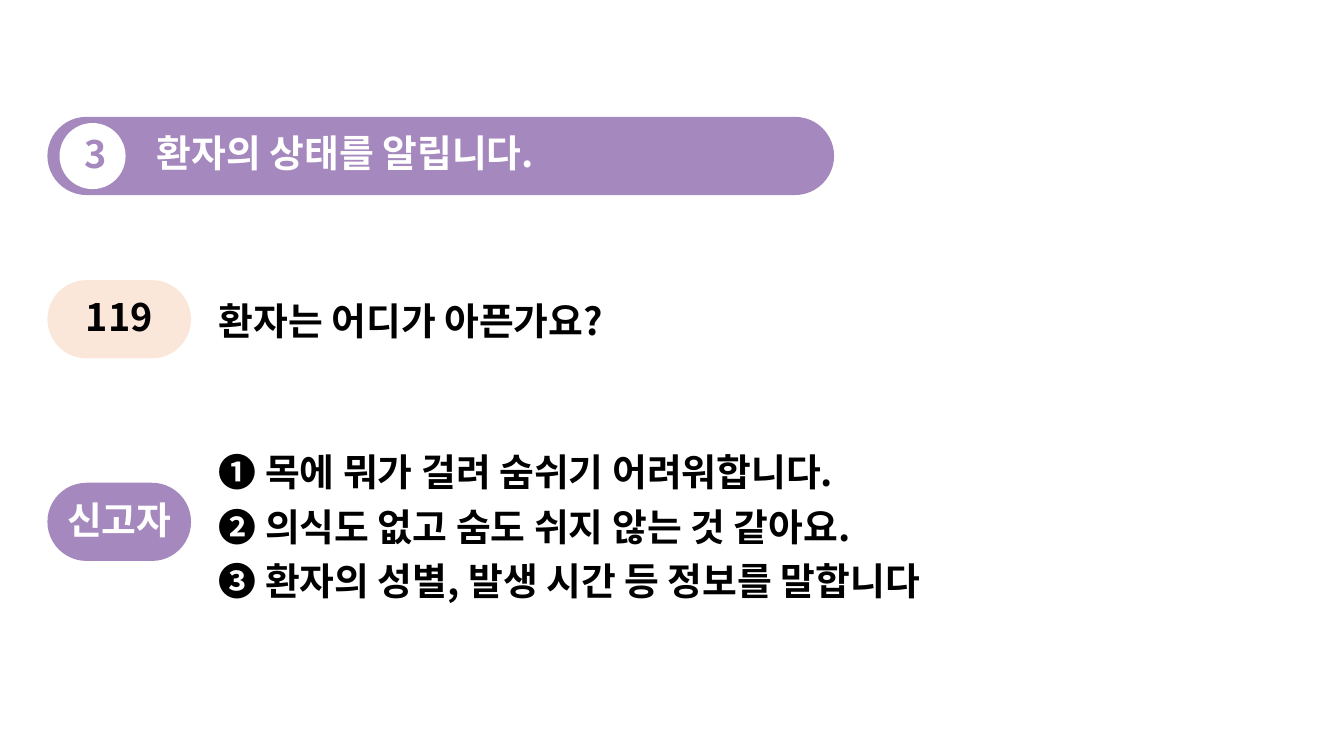
from lxml.etree import SubElement
from pptx import Presentation
from pptx.dml.color import RGBColor
from pptx.enum.shapes import MSO_SHAPE
from pptx.enum.text import MSO_ANCHOR, MSO_AUTO_SIZE, PP_ALIGN
from pptx.oxml.ns import qn
from pptx.util import Cm, Pt

FONT = "Noto Sans CJK KR"
PURPLE, PEACH, WHITE, BLACK = "A588BD", "FAE7DA", "FFFFFF", "000000"
LEFT, PILL_H, LABEL_H = 2.39, 3.94, 2.36
PILL_W, ANSWER_X = 7.24, 10.87


def rgb(value):
    return RGBColor.from_string(value)


def add_filled(s, kind, x, y, w, h, color):
    sp = s.shapes.add_shape(kind, Cm(x), Cm(y), Cm(w), Cm(h))
    sp.shadow.inherit = False
    sp.fill.solid()
    sp.fill.fore_color.rgb = rgb(color)
    sp.line.fill.background()
    return sp


def add_pill(s, y, w, color):
    sp = add_filled(s, MSO_SHAPE.ROUNDED_RECTANGLE, LEFT, y, w, PILL_H, color)
    sp.adjustments[0] = 0.5


def write(sp, text, color=BLACK, align=PP_ALIGN.LEFT, spacing=0.9):
    """Fill a text box or placeholder, one paragraph per line."""
    tf = sp.text_frame
    tf.word_wrap = True
    tf.auto_size = MSO_AUTO_SIZE.NONE
    tf.vertical_anchor = MSO_ANCHOR.MIDDLE
    tf.margin_left = tf.margin_right = tf.margin_top = tf.margin_bottom = Cm(0.15)
    tf.text = text
    for p in tf.paragraphs:
        p.alignment = align
        p.line_spacing = spacing
        p.space_before = Pt(0)
        pPr = p._p.get_or_add_pPr()
        pPr.set("marL", "0")
        pPr.set("indent", "0")
        SubElement(pPr, qn("a:buNone"))
        r = p.runs[0]
        r.font.name = FONT
        r.font.size = Pt(54)
        r.font.bold = True
        r.font.color.rgb = rgb(color)
        SubElement(r._r.get_or_add_rPr(), qn("a:ea"), typeface=FONT)


def add_text(s, text, x, y, w, h, **fmt):
    sp = s.shapes.add_textbox(Cm(x), Cm(y), Cm(w), Cm(h))
    write(sp, text, **fmt)


def place(s, sp, text, x, y, w, h, **fmt):
    """Position a placeholder and bring it to the front."""
    sp.left, sp.top, sp.width, sp.height = Cm(x), Cm(y), Cm(w), Cm(h)
    s.shapes._spTree.append(sp._element)
    write(sp, text, **fmt)


def add_speaker(s, name, y, label_w, fill, color):
    add_pill(s, y, PILL_W, fill)
    add_text(s, name, LEFT + (PILL_W - label_w) / 2, y + 0.79, label_w, LABEL_H,
             color=color, align=PP_ALIGN.CENTER)


def main():
    prs = Presentation()
    prs.slide_width, prs.slide_height = Cm(67.74), Cm(38.1)
    s = prs.slides.add_slide(prs.slide_layouts[1])
    title, body = s.placeholders

    # Heading bar with step number
    add_pill(s, 5.89, 39.65, PURPLE)
    place(s, title, "환자의 상태를 알립니다.", 7.75, 6.63, 25.78, LABEL_H, color=WHITE)
    add_filled(s, MSO_SHAPE.OVAL, 3, 6.2, 3.33, 3.33, WHITE)
    add_text(s, "3", 4.11, 6.68, 1.12, LABEL_H, color=PURPLE, align=PP_ALIGN.CENTER)

    # Question from the emergency line
    add_speaker(s, "119", 14.12, 4.22, PEACH, BLACK)
    add_text(s, "환자는 어디가 아픈가요?", ANSWER_X, 14.38, 30.58, 3.05, spacing=1.2)

    # Answers from the caller
    add_speaker(s, "신고자", 24.33, 5.69, PURPLE, WHITE)
    answers = ["➊ 목에 뭐가 걸려 숨쉬기 어려워합니다.",
               "➋ 의식도 없고 숨도 쉬지 않는 것 같아요.",
               "➌ 환자의 성별, 발생 시간 등 정보를 말합니다"]
    place(s, body, "\n".join(answers), ANSWER_X, 22, 53.14, 8.59, spacing=1.2)

    prs.save("out.pptx")


if __name__ == "__main__":
    main()
